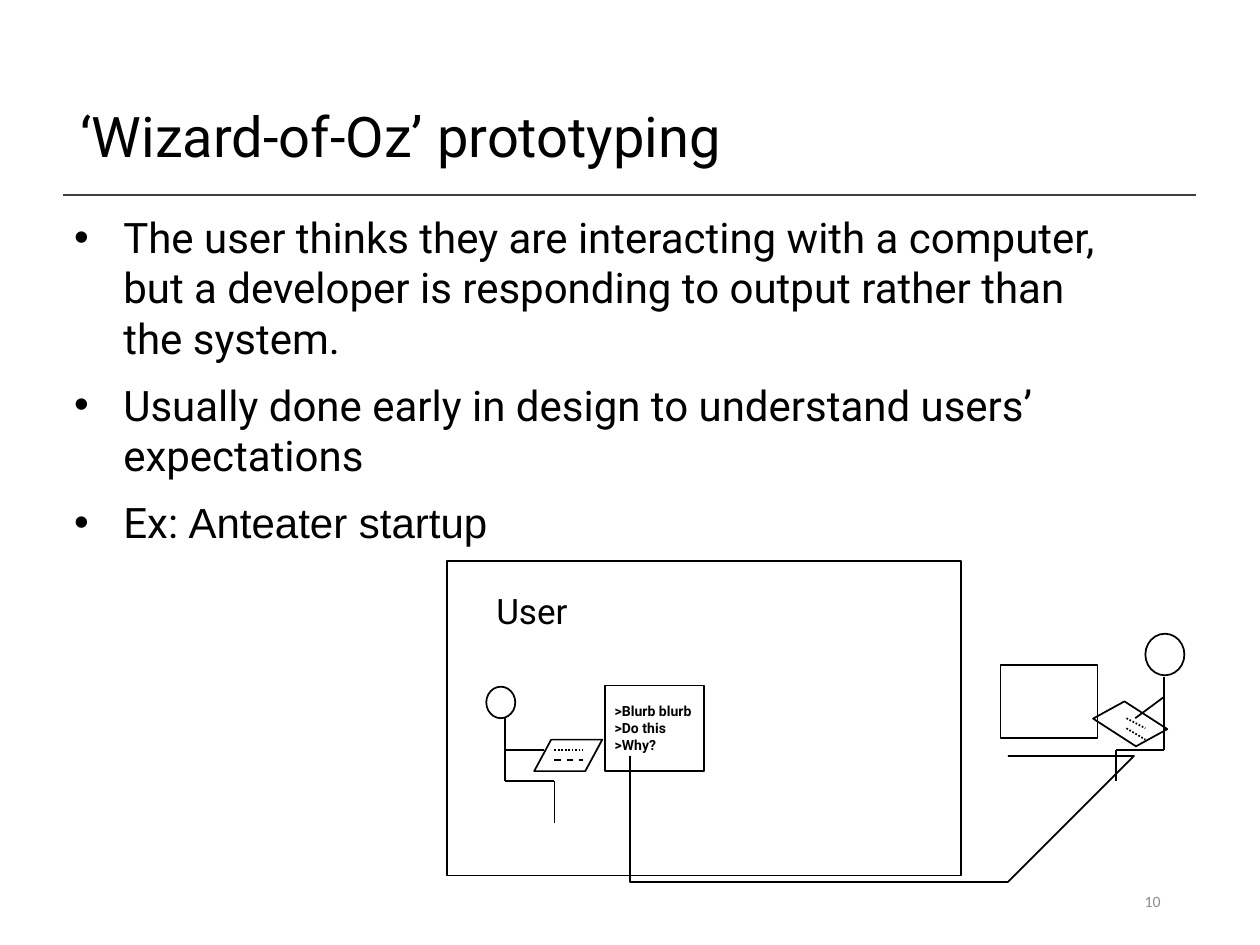
"""Build the slide on Wizard-of-Oz prototyping."""
from lxml.etree import SubElement
from pptx import Presentation
from pptx.dml.color import RGBColor
from pptx.enum.dml import MSO_LINE
from pptx.enum.shapes import MSO_CONNECTOR, MSO_SHAPE
from pptx.enum.text import MSO_ANCHOR, PP_ALIGN
from pptx.oxml.ns import qn
from pptx.util import Inches, Pt


def hue(code):
    """Turn a hex string into a colour."""
    return RGBColor.from_string(code)


def write(part, text, code="000000", **form):
    """Add a run of text with the given font values."""
    run = part.add_run()
    run.text = text
    for name, value in ({"name": "Roboto"} | form).items():
        setattr(run.font, name, value)
    run.font.color.rgb = hue(code)


deck = Presentation()
deck.slide_width, deck.slide_height = Inches(10), Inches(7.5)
slide = deck.slides.add_slide(deck.slide_layouts[5])

title = slide.shapes.title
place = {"left": 0.54, "top": 0.82, "width": 5.36, "height": 0.58}
for side, size in place.items():
    setattr(title, side, Inches(size))
title.text_frame.word_wrap = False
title.text_frame.vertical_anchor = MSO_ANCHOR.MIDDLE
head = title.text_frame.paragraphs[0]
head.alignment = PP_ALIGN.LEFT
head.line_spacing = 0.9
write(head, "‘Wizard-of-Oz’ prototyping", size=Pt(32))

points = [
    [("The user thinks they are interacting with a computer, but a developer "
      "is responding to output rather than the system.", "Roboto")],
    [("Usually done early in design to understand users’ expectations", "Roboto")],
    [("Ex: ", "Roboto"), ("Anteater startup", "Arial")],
]
body = slide.shapes.add_textbox(Inches(0.49), Inches(1.63), Inches(8.58), Inches(5.08))
frame = body.text_frame
frame.word_wrap = True
for i, point in enumerate(points):
    para = frame.paragraphs[0] if i == 0 else frame.add_paragraph()
    props = para._p.get_or_add_pPr()
    props.set("marL", str(Inches(0.39)))
    props.set("indent", str(-Inches(0.39)))
    SubElement(props, qn("a:buFont"), typeface="Arial")
    SubElement(props, qn("a:buChar"), char="•")
    if i:
        para.space_before = Pt(9.4)
    for text, face in point:
        write(para, text, name=face, size=Pt(24))

scene = slide.shapes.add_group_shape().shapes
rect, oval, slant = MSO_SHAPE.RECTANGLE, MSO_SHAPE.OVAL, MSO_SHAPE.PARALLELOGRAM
forms = [
    (rect, 4.8, 5.44, 0.79, 0.68, 0),
    (rect, 3.55, 4.45, 4.08, 2.5, 0),
    (rect, 7.94, 5.28, 0.77, 0.58, 0),
    (oval, 3.86, 5.45, 0.23, 0.25, 0),
    (slant, 4.24, 5.87, 0.54, 0.25, 0),
    (oval, 9.09, 5.03, 0.31, 0.33, 0),
    (slant, 8.7, 5.62, 0.54, 0.25, 212.9),
]
drawn = []
for kind, *box, turn in forms:
    shape = scene.add_shape(kind, *map(Inches, box))
    shape.rotation = turn
    if kind == slant:
        shape.adjustments[0] = 0.54
    drawn.append(shape)

curves = [
    [(5.24, 6.03), (5.1, 6.51), (4.95, 6.99), (5.24, 7.2)],
    [(5.24, 7.2), (5.54, 7.41), (6.47, 7.39), (7.01, 7.28)],
    [(7.01, 7.28), (7.55, 7.17), (8.27, 6.77), (8.47, 6.53)],
    [(8.47, 6.53), (8.68, 6.3), (8.28, 5.98), (8.24, 5.87)],
]
steps = 16
trail = []
for curve in curves:
    for n in range(1, steps + 1):
        t = n / steps
        parts = ((1 - t) ** 3, 3 * t * (1 - t) ** 2, 3 * t ** 2 * (1 - t), t ** 3)
        trail.append([sum(w * spot[axis] for w, spot in zip(parts, curve))
                      for axis in (0, 1)])
cable = scene.build_freeform(*curves[0][0], scale=Inches(1))
cable.add_line_segments(trail, close=False)
drawn.append(cable.convert_to_shape())

for shape in drawn:
    shape.shadow.inherit = False
    shape.fill.background()
    shape.line.color.rgb = hue("000000")
    shape.line.width = Pt(1)

dots, dash = MSO_LINE.ROUND_DOT, MSO_LINE.DASH
lines = [
    (slide.shapes, 0.5, 1.55, 9.49, 1.55, "404040", None),
    *[(scene, *ends, "000000", style) for *ends, style in [
        (4.01, 5.7, 4.01, 5.95, None),
        (4.01, 5.95, 4.32, 5.95, None),
        (4.01, 5.95, 4.01, 6.2, None),
        (4.01, 6.2, 4.4, 6.2, None),
        (4.4, 6.2, 4.4, 6.53, None),
        (4.4, 5.95, 4.63, 5.95, dots),
        (4.4, 6.03, 4.63, 6.03, dash),
        (9.24, 5.37, 9.24, 5.7, None),
        (9.24, 5.53, 9.01, 5.7, None),
        (8.94, 5.7, 9.09, 5.78, dots),
        (8.94, 5.78, 9.09, 5.87, dots),
        (9.24, 5.7, 9.24, 5.95, None),
        (9.24, 5.95, 8.86, 5.95, None),
        (8.86, 5.95, 8.86, 6.2, None),
    ]],
]
for home, *ends, code, style in lines:
    line = home.add_connector(MSO_CONNECTOR.STRAIGHT, *map(Inches, ends))
    line.line.color.rgb = hue(code)
    line.line.width = Pt(1)
    if style:
        line.line.dash_style = style
    SubElement(line._element.spPr, qn("a:effectLst"))

labels = [
    (scene, (4.78, 5.53, 0.81, 0.5), [">Blurb blurb", ">Do this", ">Why?"],
     PP_ALIGN.LEFT, "000000", {"size": Pt(8), "bold": True}),
    (scene, (3.84, 4.63, 0.79, 0.44), ["User"],
     PP_ALIGN.LEFT, "000000", {"size": Pt(20)}),
    (slide.shapes, (7.06, 6.95, 2.25, 0.4), ["10"],
     PP_ALIGN.RIGHT, "8C8C8C", {"size": Pt(9), "name": "Calibri"}),
]
for home, box, rows, align, code, form in labels:
    frame = home.add_textbox(*map(Inches, box)).text_frame
    frame.word_wrap = home is not scene
    frame.vertical_anchor = MSO_ANCHOR.TOP if home is scene else MSO_ANCHOR.MIDDLE
    for i, row in enumerate(rows):
        para = frame.paragraphs[0] if i == 0 else frame.add_paragraph()
        para.alignment = align
        write(para, row, code, **form)

deck.save("out.pptx")
